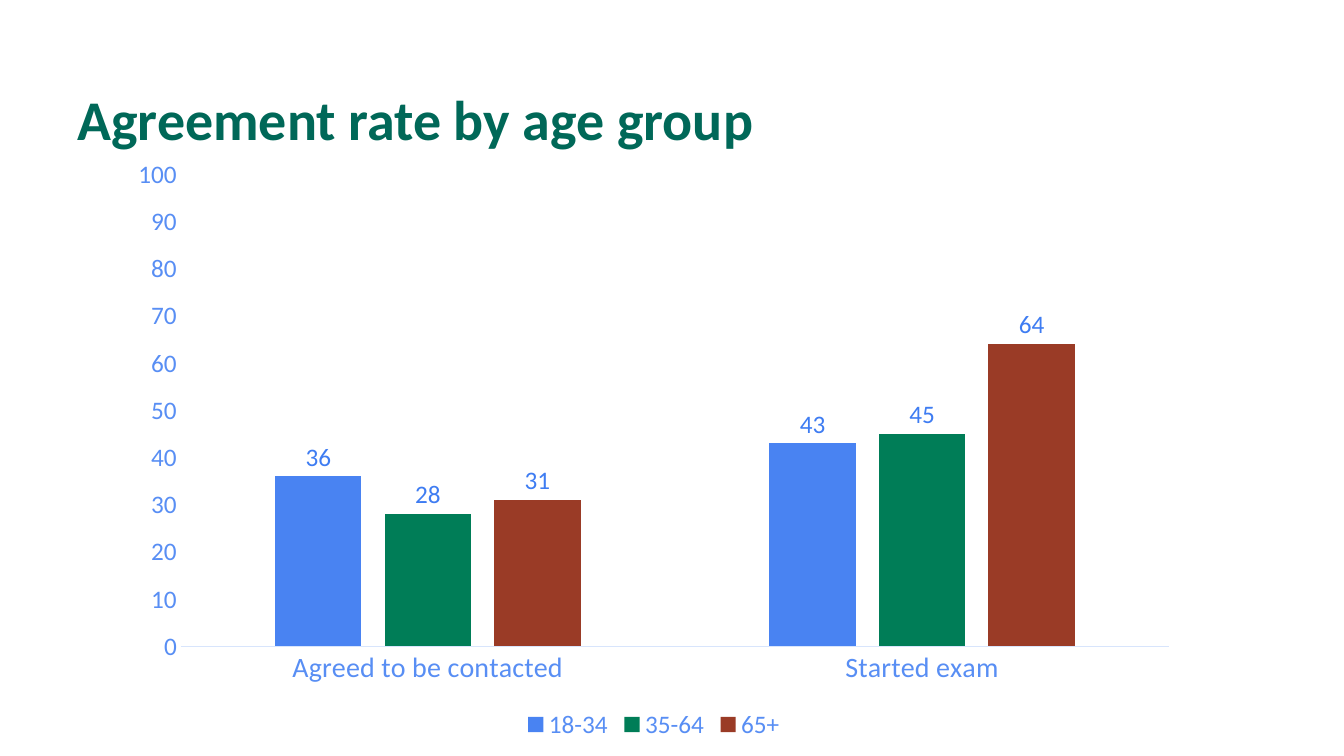
from pptx import Presentation
from pptx.chart.data import CategoryChartData
from pptx.dml.color import RGBColor
from pptx.enum.chart import XL_CHART_TYPE, XL_LABEL_POSITION, XL_LEGEND_POSITION, XL_TICK_MARK
from pptx.enum.text import MSO_ANCHOR
from pptx.util import Inches, Pt

GROUPS = ["Agreed to be contacted", "Started exam"]
AGES = [
    ("18-34", (36, 43), "4983F2"),
    ("35-64", (28, 45), "007D57"),
    ("65+", (31, 64), "9A3B26"),
]


def tint(code):
    return RGBColor.from_string(code)


def assign(item, values):
    for name, value in values.items():
        setattr(item, name, value)


class Deck:
    face = "Calibri"
    title_ink = "006858"
    axis_ink = "588EF4"
    label_ink = "3E7CF2"
    line_ink = "D8E5FC"

    def __init__(self, show):
        self.slide = show.slides.add_slide(show.slide_layouts[6])

    def style(self, font, size, ink, bold=False):
        assign(font, {"name": self.face, "size": Pt(size), "bold": bold})
        font.color.rgb = tint(ink)

    def title(self, text, box):
        frame = self.slide.shapes.add_textbox(*map(Inches, box)).text_frame
        assign(frame, {"word_wrap": True, "vertical_anchor": MSO_ANCHOR.BOTTOM})
        para = frame.paragraphs[0]
        para.line_spacing = Pt(40)
        run = para.add_run()
        run.text = text
        self.style(run.font, 40, self.title_ink, True)

    def columns(self, groups, rows, box):
        data = CategoryChartData()
        data.categories = groups
        for name, values, _ in rows:
            data.add_series(name, values)
        chart = self.slide.shapes.add_chart(
            XL_CHART_TYPE.COLUMN_CLUSTERED, *map(Inches, box), data).chart
        assign(chart, {"has_title": False, "has_legend": True})
        self.style(chart.font, 10, "0F56DC")
        assign(chart.legend, {"position": XL_LEGEND_POSITION.BOTTOM, "include_in_layout": False})
        self.style(chart.legend.font, 18, self.axis_ink)

        plot = chart.plots[0]
        assign(plot, {"gap_width": 219, "overlap": -27, "vary_by_categories": False})
        for series, (_, _, ink) in zip(plot.series, rows):
            self.bars(series, ink)
        self.axis(chart.category_axis, 20)
        line = chart.category_axis.format.line
        line.width = Pt(0.75)
        line.color.rgb = tint(self.line_ink)
        self.axis(chart.value_axis, 18)
        assign(chart.value_axis, {"minimum_scale": 0, "maximum_scale": 100, "major_unit": 10})
        chart.value_axis.format.line.fill.background()

    def bars(self, series, ink):
        series.invert_if_negative = False
        series.format.fill.solid()
        series.format.fill.fore_color.rgb = tint(ink)
        labels = series.data_labels
        assign(labels, {"show_value": True, "position": XL_LABEL_POSITION.OUTSIDE_END})
        self.style(labels.font, 18, self.label_ink)

    def axis(self, axis, size):
        assign(axis, {
            "has_major_gridlines": False,
            "major_tick_mark": XL_TICK_MARK.NONE,
            "minor_tick_mark": XL_TICK_MARK.NONE,
        })
        self.style(axis.tick_labels.font, size, self.axis_ink)


def main():
    show = Presentation()
    assign(show, {"slide_width": Inches(13.33), "slide_height": Inches(7.5)})
    deck = Deck(show)
    deck.title("Agreement rate by age group", (0.67, 0.3, 12, 1.25))
    deck.columns(GROUPS, AGES, (1.16, 1.46, 10.65, 5.93))
    show.save("out.pptx")


if __name__ == "__main__":
    main()
